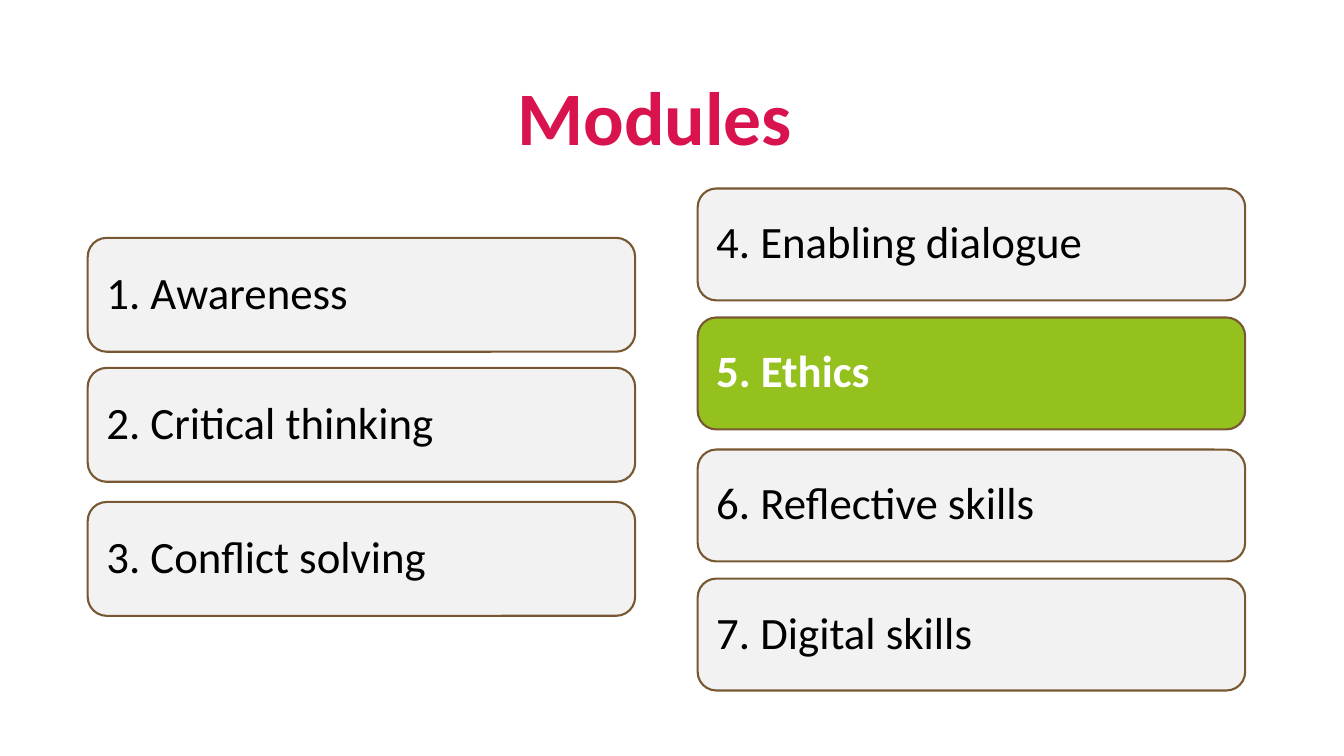
from pptx import Presentation, util as u
from pptx.dml.color import RGBColor
from pptx.enum import shapes, text

PX = 9144
RED = RGBColor(0xD8, 0x13, 0x4D)
GREEN = RGBColor(0x95, 0xC1, 0x1F)
GRAY = RGBColor(0xF2, 0xF2, 0xF2)
BROWN = RGBColor(0x78, 0x58, 0x32)
BLACK = RGBColor(0, 0, 0)
WHITE = RGBColor(0xFF, 0xFF, 0xFF)


def write(shape, words, align, anchor, size, color, bold):
    frame = shape.text_frame
    frame.word_wrap = True
    frame.vertical_anchor = anchor
    para = frame.paragraphs[0]
    para.alignment = align
    para.line_spacing = 0.9
    run = para.add_run()
    run.text = words
    look = {"name": "Calibri", "size": u.Pt(size), "bold": bold}
    for key, value in look.items():
        setattr(run.font, key, value)
    run.font.color.rgb = color


deck = Presentation()
deck.slide_width, deck.slide_height = 1333 * PX, 750 * PX
slide = deck.slides.add_slide(deck.slide_layouts[6])

title = slide.shapes.add_textbox(1 * PX, -30 * PX, 1297 * PX, 195 * PX)
write(title, "Modules", text.PP_ALIGN.CENTER, text.MSO_ANCHOR.BOTTOM, 54, RED, True)

columns = [
    (87, 113, [(236, "1. Awareness"), (365, "2. Critical thinking"),
               (498, "3. Conflict solving")]),
    (692, 111, [(187, "4. Enabling dialogue"), (315, "5. Ethics"),
                (446, "6. Reflective skills"), (574, "7. Digital skills")]),
]
active = "5. Ethics"
pads = ("margin_left", "margin_right", "margin_top", "margin_bottom")

for left, height, cards in columns:
    for top, label in cards:
        card = slide.shapes.add_shape(
            shapes.MSO_SHAPE.ROUNDED_RECTANGLE,
            left * PX, top * PX, 543 * PX, height * PX)
        on = label == active
        card.shadow.inherit = False
        card.fill.solid()
        card.fill.fore_color.rgb = GREEN if on else GRAY
        card.line.color.rgb = BROWN
        card.line.width = u.Pt(1.5)
        for pad in pads:
            setattr(card.text_frame, pad, 13 * PX)
        write(card, label, text.PP_ALIGN.LEFT, text.MSO_ANCHOR.MIDDLE, 32,
              WHITE if on else BLACK, on)

deck.save("out.pptx")
